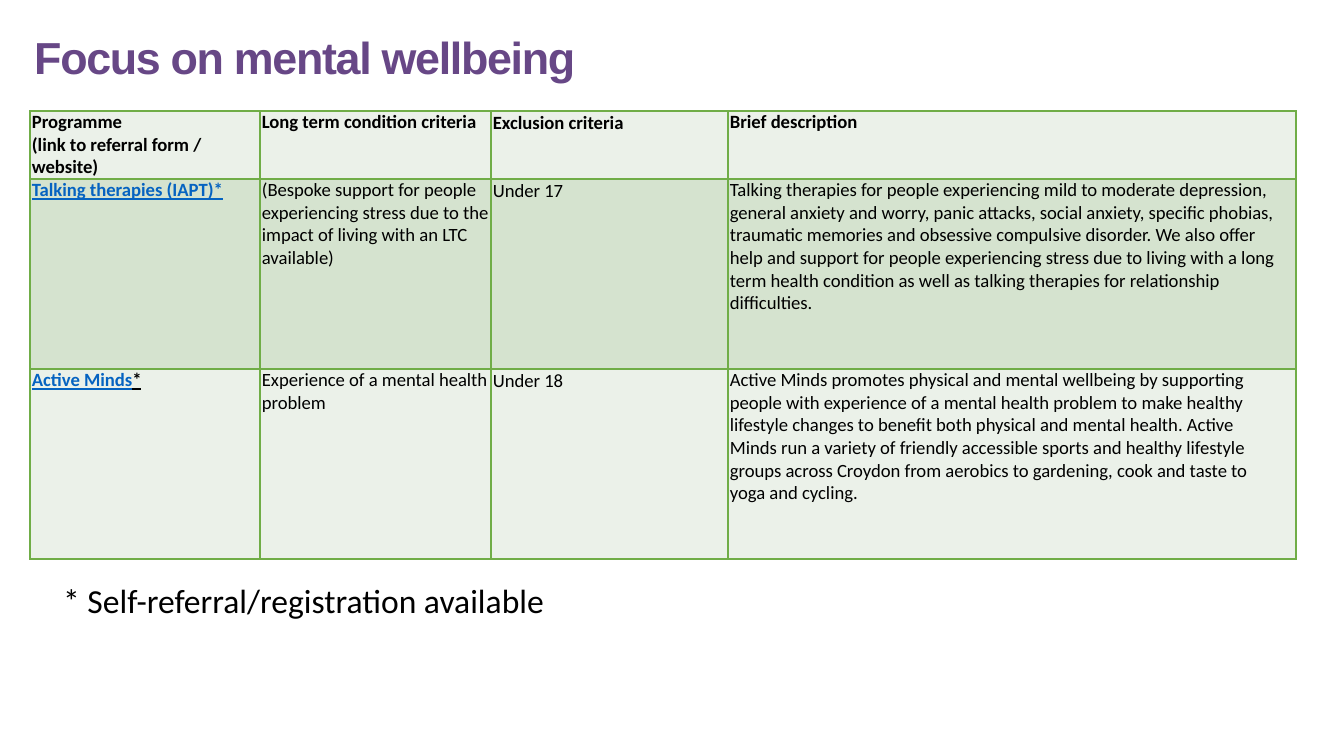
from lxml import etree
from pptx import Presentation
from pptx import util as u
from pptx.dml.color import RGBColor
from pptx.enum import shapes, text
from pptx.oxml import ns

PX = 914400 / 134.4
BLACK, BLUE, PURPLE, GREEN = "000000", "0563C1", "674786", "70AD47"
PALE, SAGE, WHITE = "EBF1E9", "D5E3CF", "FFFFFF"


def px(value):
    """Turn pixels into EMU."""
    return u.Emu(round(value * PX))


def color(value):
    """Turn a hex string into a colour."""
    return RGBColor.from_string(value)


def add_run(paragraph, words, size=10, font="Calibri", fill=BLACK,
            bold=False, underline=False, spacing=None):
    """Append one formatted run to a paragraph."""
    run = paragraph.add_run()
    run.text = words
    run.font.size, run.font.name = u.Pt(size), font
    run.font.bold, run.font.underline = bold, underline
    run.font.color.rgb = color(fill)
    if spacing is not None:
        run._r.get_or_add_rPr().set("spc", str(spacing))


class SlideBuilder:
    """Holds the style and the current slide."""

    def __init__(self, presentation):
        """Add a blank slide."""
        self.slide = presentation.slides.add_slide(presentation.slide_layouts[6])

    def title(self, words, left, top, width, height):
        """Add the filled title box."""
        shape = self.slide.shapes.add_shape(
            shapes.MSO_SHAPE.RECTANGLE, px(left), px(top), px(width), px(height))
        shape.shadow.inherit = False
        shape.fill.solid()
        shape.fill.fore_color.rgb = color(WHITE)
        shape.line.fill.background()
        frame = shape.text_frame
        frame.word_wrap = True
        frame.vertical_anchor = text.MSO_ANCHOR.TOP
        paragraph = frame.paragraphs[0]
        paragraph.alignment = text.PP_ALIGN.LEFT
        paragraph.line_spacing = 0.9
        add_run(paragraph, words, size=24, font="Arial", fill=PURPLE,
                bold=True, spacing=-70)

    def note(self, words, left, top, width, height):
        """Add a plain text box."""
        box = self.slide.shapes.add_textbox(px(left), px(top), px(width), px(height))
        frame = box.text_frame
        frame.word_wrap = True
        frame.auto_size = text.MSO_AUTO_SIZE.SHAPE_TO_FIT_TEXT
        add_run(frame.paragraphs[0], words, size=18)

    def borders(self, cell):
        """Draw a green line on all four sides of a cell."""
        properties = cell._tc.get_or_add_tcPr()
        for side in ("lnL", "lnR", "lnT", "lnB"):
            line = etree.SubElement(properties, ns.qn(f"a:{side}"), w=str(u.Pt(1)))
            solid = etree.SubElement(line, ns.qn("a:solidFill"))
            etree.SubElement(solid, ns.qn("a:srgbClr"), val=GREEN)

    def cell(self, cell, paragraphs, fill, spacing, margin_right):
        """Fill one table cell with paragraphs of runs."""
        self.borders(cell)
        cell.fill.solid()
        cell.fill.fore_color.rgb = color(fill)
        cell.margin_left, cell.margin_right = px(2), px(margin_right)
        cell.margin_top = cell.margin_bottom = 0
        frame = cell.text_frame
        for index, runs in enumerate(paragraphs):
            paragraph = frame.add_paragraph() if index else frame.paragraphs[0]
            paragraph.line_spacing = spacing
            for words, style in runs:
                add_run(paragraph, words, **style)

    def table(self, rows, left, top, widths, heights, fills):
        """Add the programme table."""
        table = self.slide.shapes.add_table(
            len(rows), len(widths), px(left), px(top),
            px(sum(widths)), px(sum(heights))).table
        table.first_row = table.horz_banding = False
        for column, width in zip(table.columns, widths):
            column.width = px(width)
        for row, height in zip(table.rows, heights):
            row.height = px(height)
        for r, (row, fill) in enumerate(zip(rows, fills)):
            for c, paragraphs in enumerate(row):
                self.cell(table.cell(r, c), paragraphs, fill,
                          spacing=1.05 if c == 2 else 1.0,
                          margin_right=18 if c == 3 else 1)


def plain(*lines, **style):
    """Make one paragraph of a single run for each line."""
    return [[(line, style)] for line in lines]


def main():
    """Build and save the slide."""
    presentation = Presentation()
    presentation.slide_width, presentation.slide_height = px(1344), px(756)
    builder = SlideBuilder(presentation)
    link = {"fill": BLUE, "bold": True, "underline": True}
    rows = [
        [plain("Programme", "(link to referral form / website)", bold=True),
         plain("Long term condition criteria", bold=True),
         plain("Exclusion criteria", bold=True),
         plain("Brief description", bold=True)],
        [plain("Talking therapies (IAPT)*", **link),
         plain("(Bespoke support for people experiencing stress due to the impact "
               "of living with an LTC available)"),
         plain("Under 17"),
         plain("Talking therapies for people experiencing mild to moderate depression, "
               "general anxiety and worry, panic attacks, social anxiety, specific "
               "phobias, traumatic memories and obsessive compulsive disorder. We also "
               "offer help and support for people experiencing stress due to living "
               "with a long term health condition as well as talking therapies for "
               "relationship difficulties.")],
        [[[("Active Minds", link), ("*", {**link, "fill": BLACK})]],
         plain("Experience of a mental health problem"),
         plain("Under 18"),
         plain("Active Minds promotes physical and mental wellbeing by supporting "
               "people with experience of a mental health problem to make healthy "
               "lifestyle changes to benefit both physical and mental health. Active "
               "Minds run a variety of friendly accessible sports and healthy lifestyle "
               "groups across Croydon from aerobics to gardening, cook and taste to "
               "yoga and cycling.")],
    ]
    builder.table(rows, 30, 111, [230, 231, 237, 568], [59, 190, 190],
                  [PALE, SAGE, PALE])
    builder.title("Focus on mental wellbeing", 21, 29, 1285, 81)
    builder.note("* Self-referral/registration available", 50, 573, 659, 54)
    presentation.save("out.pptx")


if __name__ == "__main__":
    main()
